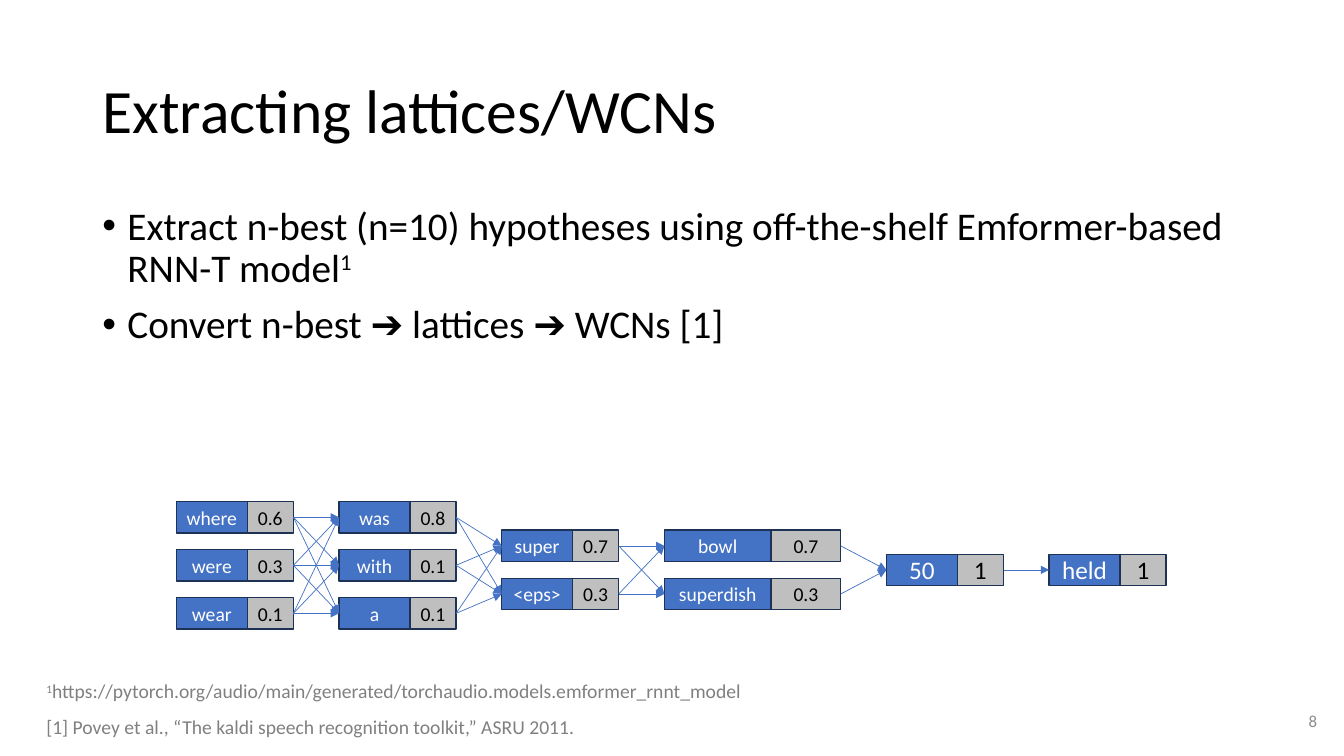
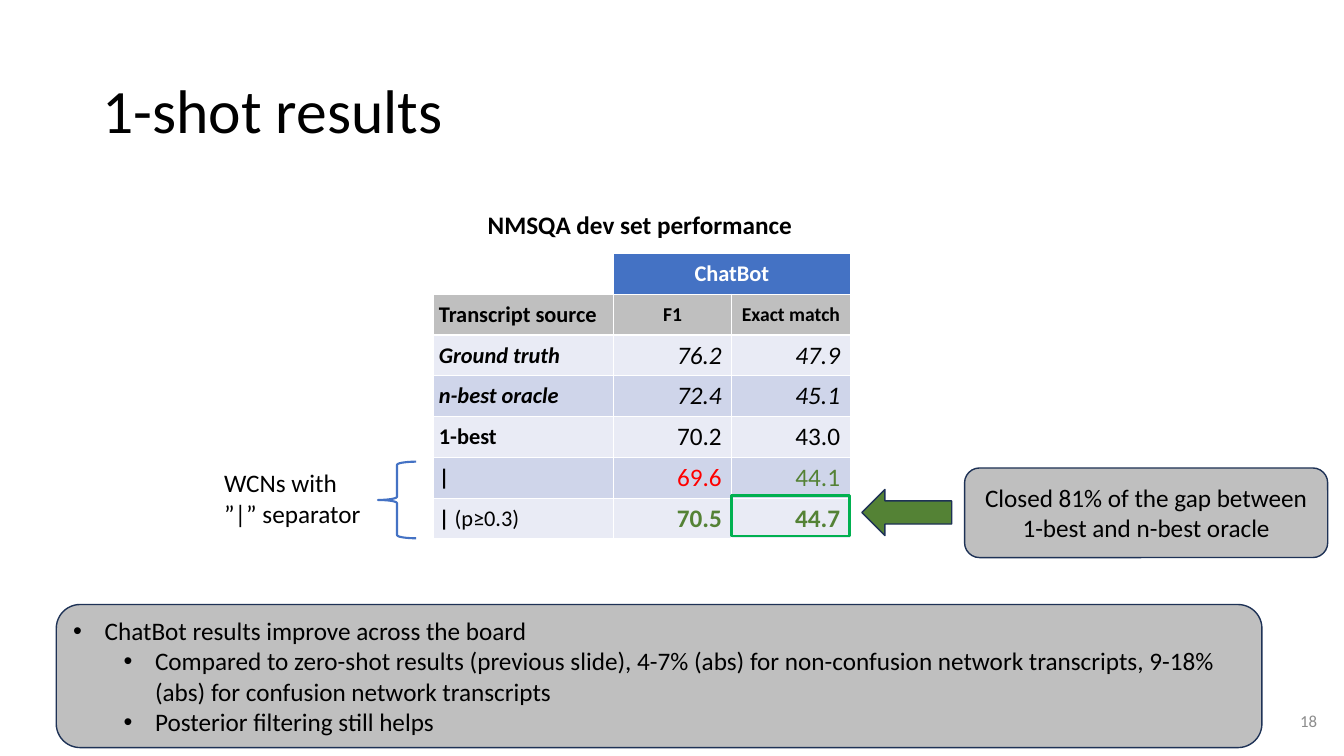
"""Build two slides on word confusion networks: their extraction and one-shot results."""

from dataclasses import dataclass
from itertools import product
from typing import NamedTuple

from lxml import etree
from pptx import Presentation
from pptx.dml.color import RGBColor
from pptx.enum.shapes import MSO_CONNECTOR, MSO_SHAPE
from pptx.enum.text import MSO_ANCHOR, MSO_AUTO_SIZE, PP_ALIGN
from pptx.oxml.ns import qn
from pptx.util import Pt

LEFT, CENTER, RIGHT = PP_ALIGN.LEFT, PP_ALIGN.CENTER, PP_ALIGN.RIGHT
TOP, MIDDLE = MSO_ANCHOR.TOP, MSO_ANCHOR.MIDDLE
RECTANGLE, ROUNDED = MSO_SHAPE.RECTANGLE, MSO_SHAPE.ROUNDED_RECTANGLE
LEFT_ARROW, LEFT_BRACE = MSO_SHAPE.LEFT_ARROW, MSO_SHAPE.LEFT_BRACE
STRAIGHT, FIXED_SIZE = MSO_CONNECTOR.STRAIGHT, MSO_AUTO_SIZE.NONE
LEFT_SIDE, RIGHT_SIDE = 1, 3

FONT = "Calibri"
BLACK, WHITE, BLUE, NAVY = "000000", "FFFFFF", "4472C4", "1E3256"
SILVER, GRAY, NUMBER_GRAY = "BFBFBF", "808080", "8C8C8C"
RED, GREEN, BRIGHT_GREEN = "FF0000", "548235", "00B050"
BAND_FILLS = ("E9EBF5", "CFD5EA")

BOX_HEIGHT, ROW_PITCH, COLUMN_GAP = 22.4, 34.3, 32.6
TABLE_COLUMNS, TABLE_ROW = (128.4, 84.5, 84.5), 29.15


class Area(NamedTuple):
    """Left, top, width and height in points."""

    left: float
    top: float
    width: float
    height: float


class Span(NamedTuple):
    """A run that may differ from its paragraph."""

    text: str
    superscript: bool = False
    bold: bool | None = None


@dataclass(frozen=True)
class Para:
    """A paragraph with its shared formatting."""

    spans: tuple[Span, ...]
    size: float = 18
    color: str = BLACK
    bold: bool = False
    italic: bool = False
    align: PP_ALIGN = LEFT
    level: int = 0
    indent: float = 0
    hanging: float = 0
    line_spacing: float | None = None
    space_before: float = 0


@dataclass(frozen=True)
class Slot:
    """One column of competing words in the network."""

    words: tuple[tuple[str, str], ...]
    center: float = 407.1
    word_width: float = 50.6
    score_width: float = 33
    size: float = 14


@dataclass(frozen=True)
class Result:
    """One row of scores."""

    label: tuple[Span, ...]
    scores: tuple[str, str]
    colors: tuple[str, str] = (BLACK, BLACK)
    italic: bool = False
    bold: bool = False


SLOTS = (
    Slot((("where", "0.6"), ("were", "0.3"), ("wear", "0.1")), center=403.8),
    Slot((("was", "0.8"), ("with", "0.1"), ("a", "0.1")), center=403.8),
    Slot((("super", "0.7"), ("<eps>", "0.3"))),
    Slot((("bowl", "0.7"), ("superdish", "0.3")), word_width=76.2, score_width=49.8),
    Slot((("50", "1"),), size=18),
    Slot((("held", "1"),), size=18),
)

RESULTS = (
    Result((Span("Ground truth"),), ("76.2", "47.9"), italic=True),
    Result((Span("n-best oracle"),), ("72.4", "45.1"), italic=True),
    Result((Span("1-best"),), ("70.2", "43.0")),
    Result((Span("|"),), ("69.6", "44.1"), (RED, GREEN)),
    Result((Span("| "), Span("(p≥0.3)", bold=False)), ("70.5", "44.7"), (GREEN, GREEN), bold=True),
)


def rgb(value: str) -> RGBColor:
    """Turn a hex string into a colour."""
    return RGBColor.from_string(value)


def points(area: Area) -> tuple[Pt, ...]:
    """Turn an area into lengths."""
    return tuple(Pt(value) for value in area)


def plain(text: str, **style) -> Para:
    """Make a paragraph of one span."""
    return Para((Span(text),), **style)


def add_bullet(paragraph, para: Para) -> None:
    """Give a paragraph a hanging bullet."""
    properties = paragraph._p.get_or_add_pPr()
    properties.set("marL", str(Pt(para.indent)))
    properties.set("indent", str(-Pt(para.hanging)))
    etree.SubElement(properties, qn("a:buFont"), typeface="Arial")
    etree.SubElement(properties, qn("a:buChar"), char="•")


def write(frame, *paras: Para) -> None:
    """Fill a text frame with paragraphs."""
    for index, para in enumerate(paras):
        paragraph = frame.add_paragraph() if index else frame.paragraphs[0]
        paragraph.alignment, paragraph.level = para.align, para.level
        if para.line_spacing:
            paragraph.line_spacing = para.line_spacing
        paragraph.space_before = Pt(para.space_before)
        if para.hanging:
            add_bullet(paragraph, para)
        font = paragraph.font
        font.name, font.size = FONT, Pt(para.size)
        font.bold, font.italic = para.bold, para.italic
        font.color.rgb = rgb(para.color)
        for span in para.spans:
            run = paragraph.add_run()
            run.text = span.text
            if span.bold is not None:
                run.font.bold = span.bold
            if span.superscript:
                run.font._element.set("baseline", "30000")


def add_text(page, area: Area, *paras: Para, anchor: MSO_ANCHOR = TOP, wrap: bool = True) -> None:
    """Add a text box."""
    frame = page.shapes.add_textbox(*points(area)).text_frame
    frame.word_wrap, frame.vertical_anchor = wrap, anchor
    write(frame, *paras)


def add_box(page, kind: MSO_SHAPE, area: Area, *paras: Para, fill: str | None = None,
            line: str = NAVY, weight: float = 1):
    """Add a preset shape with optional fill and text."""
    box = page.shapes.add_shape(kind, *points(area))
    box.shadow.inherit = False
    if fill:
        box.fill.solid()
        box.fill.fore_color.rgb = rgb(fill)
    else:
        box.fill.background()
    box.line.color.rgb, box.line.width = rgb(line), Pt(weight)
    box.text_frame.word_wrap = True
    box.text_frame.vertical_anchor = MIDDLE
    write(box.text_frame, *paras)
    return box


def add_page(deck, title: str, number: int):
    """Add a page with its title and number."""
    page = deck.slides.add_slide(deck.slide_layouts[5])
    heading = page.shapes.title
    heading.left, heading.top, heading.width, heading.height = points(Area(66, 28.75, 828, 104.4))
    frame = heading.text_frame
    frame.auto_size, frame.vertical_anchor = FIXED_SIZE, MIDDLE
    write(frame, plain(title, size=44, line_spacing=0.9))
    add_text(page, Area(732, 500.5, 216, 28.75),
             plain(str(number), size=12, color=NUMBER_GRAY, align=RIGHT), anchor=MIDDLE)
    return page


def add_arrow(page, start, end) -> None:
    """Join the right side of one box to the left side of another."""
    arrow = page.shapes.add_connector(STRAIGHT, 0, 0, 0, 0)
    arrow.begin_connect(start, RIGHT_SIDE)
    arrow.end_connect(end, LEFT_SIDE)
    arrow.line.color.rgb, arrow.line.width = rgb(BLUE), Pt(0.5)
    etree.SubElement(arrow.line._get_or_add_ln(), qn("a:tailEnd"), type="triangle")
    etree.SubElement(arrow._element.spPr, qn("a:effectLst"))


def add_cell_box(page, area: Area, text: str, size: float, fill: str, color: str):
    """Add one half of a word and score pair."""
    box = add_box(page, RECTANGLE, area, plain(text, size=size, color=color, align=CENTER), fill=fill)
    box.text_frame.margin_left = box.text_frame.margin_right = 0
    return box


def add_network(page) -> None:
    """Draw the confusion network column by column."""
    left = 126.0
    previous_scores = []
    for slot in SLOTS:
        words, scores = [], []
        first_top = slot.center - ROW_PITCH * (len(slot.words) - 1) / 2 - BOX_HEIGHT / 2
        for row, (word, score) in enumerate(slot.words):
            top = first_top + row * ROW_PITCH
            word_area = Area(left, top, slot.word_width, BOX_HEIGHT)
            score_area = Area(left + slot.word_width, top, slot.score_width, BOX_HEIGHT)
            words.append(add_cell_box(page, word_area, word, slot.size, BLUE, WHITE))
            scores.append(add_cell_box(page, score_area, score, slot.size, SILVER, BLACK))
        for start, end in product(previous_scores, words):
            add_arrow(page, start, end)
        previous_scores = scores
        left += slot.word_width + slot.score_width + COLUMN_GAP


def fill_cell(cell, para: Para, fill: str, tight: bool = True) -> None:
    """Write and colour one table cell."""
    cell.fill.solid()
    cell.fill.fore_color.rgb = rgb(fill)
    cell.vertical_anchor = MIDDLE
    if tight:
        cell.margin_left = cell.margin_right = Pt(3.6)
        cell.margin_top = cell.margin_bottom = Pt(3.6)
    write(cell.text_frame, para)


def add_results(page) -> None:
    """Add the score table."""
    row_count = len(RESULTS) + 2
    area = Area(309.9, 181, sum(TABLE_COLUMNS), TABLE_ROW * row_count)
    table = page.shapes.add_table(row_count, len(TABLE_COLUMNS), *points(area)).table
    table.horz_banding = False
    for column, width in zip(table.columns, TABLE_COLUMNS):
        column.width = Pt(width)
    for row in table.rows:
        row.height = Pt(TABLE_ROW)
    table.cell(0, 0).fill.background()
    table.cell(0, 1).merge(table.cell(0, 2))
    fill_cell(table.cell(0, 1), plain("ChatBot", size=16, color=WHITE, bold=True, align=CENTER), BLUE)
    headings = (("Transcript source", 16, LEFT), ("F1", 14, CENTER), ("Exact match", 14, CENTER))
    for column, (text, size, align) in enumerate(headings):
        fill_cell(table.cell(1, column), plain(text, size=size, bold=True, align=align), SILVER)
    for index, result in enumerate(RESULTS):
        band, row = BAND_FILLS[index % 2], index + 2
        label = Para(result.label, size=16, bold=True, italic=result.italic)
        fill_cell(table.cell(row, 0), label, band)
        for column, (score, color) in enumerate(zip(result.scores, result.colors), start=1):
            para = plain(score, color=color, bold=result.bold, italic=result.italic, align=RIGHT)
            fill_cell(table.cell(row, column), para, band, tight=False)


def build_lattice_page(deck) -> None:
    """Build the page on extracting networks."""
    page = add_page(deck, "Extracting lattices/WCNs", 8)
    body = {"size": 28, "indent": 18, "hanging": 18, "line_spacing": 0.9, "space_before": 10}
    extract = "Extract n-best (n=10) hypotheses using off-the-shelf Emformer-based RNN-T model"
    add_text(page, Area(66, 143.75, 828, 342.6),
             Para((Span(extract), Span("1", superscript=True)), **body),
             plain("Convert n-best ➔ lattices ➔ WCNs [1]", **body))
    add_network(page)
    link = "https://pytorch.org/audio/main/generated/torchaudio.models.emformer_rnnt_model"
    paper = "[1] Povey et al., “The kaldi speech recognition toolkit,” ASRU 2011."
    for top, spans in ((481.7, (Span("1", superscript=True), Span(link))), (506.9, (Span(paper),))):
        add_text(page, Area(26, top, 912, 24.25), Para(spans, size=14, color=GRAY))


def build_results_page(deck) -> None:
    """Build the page with one-shot scores."""
    page = add_page(deck, "1-shot results", 18)
    add_text(page, Area(341.3, 146.3, 234, 29), plain("NMSQA dev set performance", bold=True), wrap=False)
    outer = {"indent": 22.5, "hanging": 22.5}
    inner = {"indent": 58.5, "hanging": 22.5, "level": 1}
    add_box(page, ROUNDED, Area(40.2, 431.8, 861.2, 102.2),
            plain("ChatBot results improve across the board", **outer),
            plain("Compared to zero-shot results (previous slide), 4-7% (abs) for non-confusion network "
                  "transcripts, 9-18% (abs) for confusion network transcripts", **inner),
            plain("Posterior filtering still helps", **inner), fill=SILVER)
    add_text(page, Area(153, 330.5, 124, 51), plain("WCNs with"), plain("”|” separator"))
    add_box(page, LEFT_BRACE, Area(270, 329.8, 27.2, 54.7), line=BLUE, weight=1.5)
    add_results(page)
    add_box(page, LEFT_ARROW, Area(615.6, 349.6, 64.2, 33), fill=GREEN)
    add_box(page, ROUNDED, Area(689, 334.3, 259.4, 64),
            plain("Closed 81% of the gap between 1-best and n-best oracle", align=CENTER), fill=SILVER)
    add_box(page, RECTANGLE, Area(522.5, 354, 84.2, 29), line=BRIGHT_GREEN, weight=1.75)


def main() -> None:
    """Build and save the deck."""
    deck = Presentation()
    deck.slide_width, deck.slide_height = Pt(960), Pt(540)
    build_lattice_page(deck)
    build_results_page(deck)
    deck.save("out.pptx")


if __name__ == "__main__":
    main()
